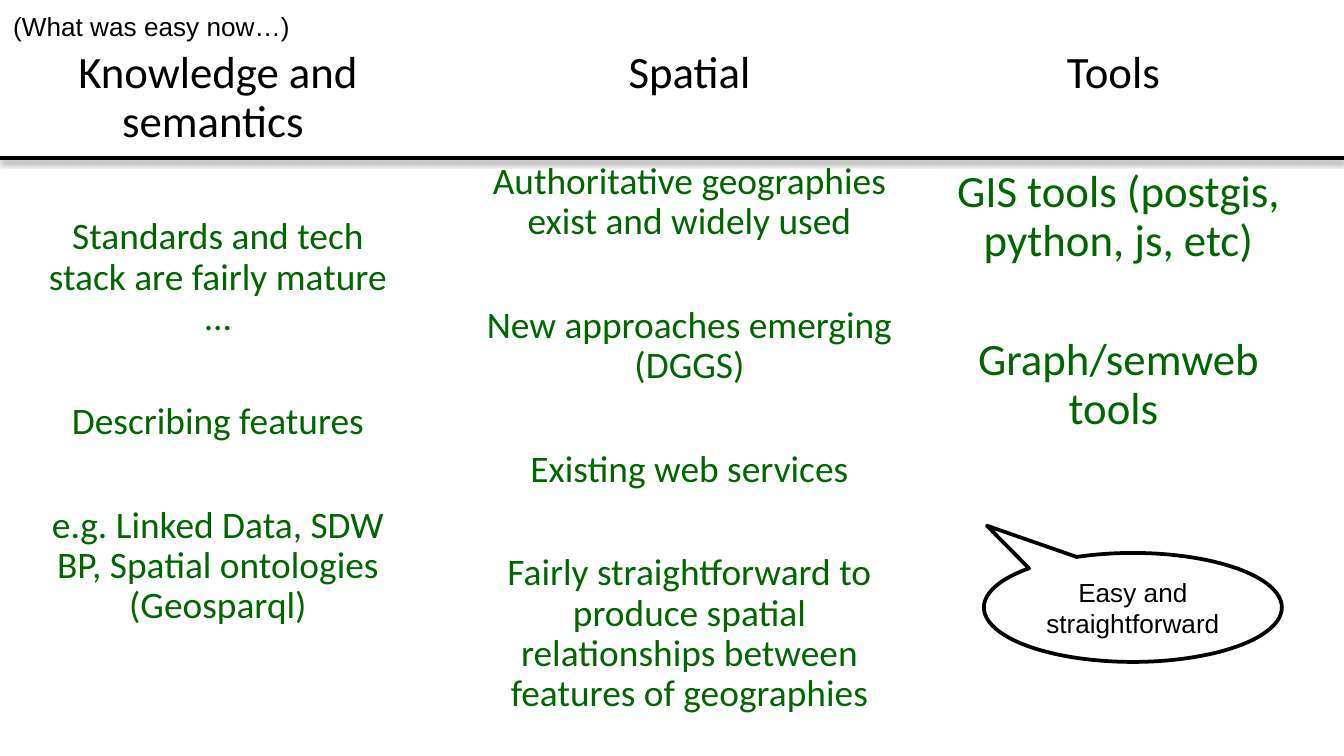
from lxml import etree
from pptx import Presentation
from pptx import util as u
from pptx.dml.color import RGBColor
from pptx.enum import shapes, text
from pptx.oxml.ns import qn

SCALE = 914400 / 134.4  # EMU in one px
COLORS = {"ink": "000000", "easy": "006600", "paper": "FFFFFF"}
MARGIN = 11  # left margin of column paragraphs, px

# left, width, heading, body size, gap under heading, gap between points
COLUMNS = [
    (38, 349, "Knowledge and semantics ", 20, 38, 34, [
        "Standards and tech stack are fairly mature …",
        "Describing features",
        "e.g. Linked Data, SDW BP, Spatial ontologies (Geosparql)",
    ]),
    (473, 422, "Spatial", 20, 34, 34, [
        "Authoritative geographies exist and widely used",
        "New approaches emerging (DGGS)",
        "Existing web services",
        "Fairly straightforward to produce spatial relationships "
        "between features of geographies",
    ]),
    (945, 336, "Tools ", 24, 38, 38, [
        "GIS tools (postgis, python, js, etc)",
        "Graph/semweb tools ",
    ]),
]


def px(n):
    return u.Emu(round(n * SCALE))


def rgb(name):
    return RGBColor.from_string(COLORS[name])


def write(p, words, size=14, font="Arial", color="ink", align=None,
          before=None, spacing=None, margin=0):
    if margin:
        pPr = p._p.get_or_add_pPr()
        pPr.set("marL", str(px(margin)))
        pPr.set("indent", "0")
    p.alignment = align
    p.space_before = None if before is None else u.Pt(before)
    p.line_spacing = spacing
    r = p.add_run()
    r.text = words
    r.font.size = u.Pt(size)
    r.font.name = font
    r.font.color.rgb = rgb(color)


def add_column(s, x, y, w, h, heading, size, head_gap, gap, points):
    tf = s.shapes.add_textbox(px(x), px(y), px(w), px(h)).text_frame
    tf.word_wrap = True
    tf.margin_left = tf.margin_right = tf.margin_top = tf.margin_bottom = 0
    style = dict(font="Calibri", align=text.PP_ALIGN.CENTER, spacing=0.9,
                 margin=MARGIN)
    write(tf.paragraphs[0], heading, size=24, **style)
    for i, point in enumerate(points):
        write(tf.add_paragraph(), point, size=size, color="easy",
              before=gap if i else head_gap, **style)


def add_rule(s, x, y, w):
    line = s.shapes.add_connector(shapes.MSO_CONNECTOR.STRAIGHT,
                                  px(x), px(y), px(x + w), px(y))
    line.line.color.rgb = rgb("ink")
    line.line.width = u.Pt(2)
    # Soft shadow straight below the line
    effects = etree.SubElement(line._element.spPr, qn("a:effectLst"))
    shadow = etree.SubElement(effects, qn("a:outerShdw"), blurRad="40000",
                              dist="20000", dir="5400000", rotWithShape="0")
    color = etree.SubElement(shadow, qn("a:srgbClr"), val=COLORS["ink"])
    etree.SubElement(color, qn("a:alpha"), val="38000")


def add_callout(s, x, y, w, h, words):
    sp = s.shapes.add_shape(shapes.MSO_SHAPE.OVAL_CALLOUT,
                            px(x), px(y), px(w), px(h))
    sp.adjustments[0], sp.adjustments[1] = -0.49, -0.75
    sp.shadow.inherit = False
    sp.fill.solid()
    sp.fill.fore_color.rgb = rgb("paper")
    sp.line.color.rgb = rgb("ink")
    sp.line.width = u.Pt(2)
    tf = sp.text_frame
    tf.word_wrap = True
    tf.vertical_anchor = text.MSO_ANCHOR.MIDDLE
    write(tf.paragraphs[0], words, align=text.PP_ALIGN.CENTER)


def add_label(s, x, y, w, h, words):
    tf = s.shapes.add_textbox(px(x), px(y), px(w), px(h)).text_frame
    tf.word_wrap = False
    tf.auto_size = text.MSO_AUTO_SIZE.SHAPE_TO_FIT_TEXT
    write(tf.paragraphs[0], words)


def main():
    prs = Presentation()
    prs.slide_width, prs.slide_height = px(1344), px(756)
    s = prs.slides.add_slide(prs.slide_layouts[6])

    # Three columns of headed points
    for x, w, *content in COLUMNS:
        add_column(s, x, 50, w, 603, *content)

    # Rule under the headings
    add_rule(s, 0, 158, 1344)

    # Callout and corner label
    add_callout(s, 984, 553, 298, 109, "Easy and straightforward")
    add_label(s, 0, 4, 305, 46, "(What was easy now…)")

    prs.save("out.pptx")


if __name__ == "__main__":
    main()
